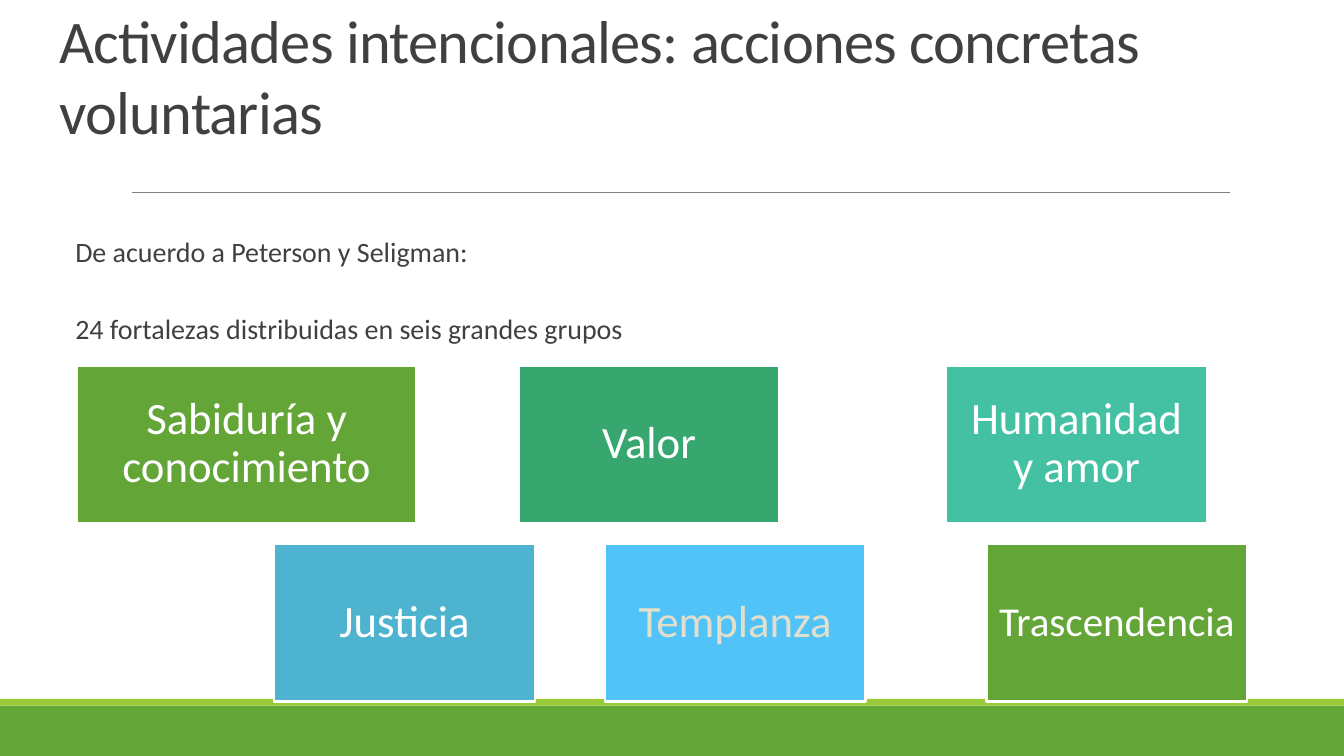
from lxml import etree
from pptx import Presentation
from pptx import util as u
from pptx.dml.color import RGBColor
from pptx.enum import shapes, text
from pptx.oxml.ns import qn

FONT = "Calibri"
COLORS = {
    "green": "63A537", "lime": "99CB38", "emerald": "37A76F",
    "teal": "44C1A3", "blue": "4EB3CF", "sky": "51C3F9",
    "rule": "808080", "ink": "404040", "white": "FFFFFF", "sand": "E2DFCC",
}
BOX_WIDTH, BOX_HEIGHT = 1.94, 1.17
ROW_TOPS = (2.72, 4.05)

# row, left, width, text, fill, text color, text size
STRENGTHS = [
    (0, 0.57, 2.53, "Sabiduría y conocimiento", "green", "white", 24),
    (0, 3.86, BOX_WIDTH, "Valor", "emerald", "white", 24),
    (0, 7.04, BOX_WIDTH, "Humanidad y amor", "teal", "white", 24),
    (1, 2.04, BOX_WIDTH, "Justicia", "blue", "white", 24),
    (1, 4.5, BOX_WIDTH, "Templanza", "sky", "sand", 24),
    (1, 7.34, BOX_WIDTH, "Trascendencia", "green", "white", 22),
]


def color(name):
    return RGBColor.from_string(COLORS[name])


def set_values(target, values):
    for name, value in values.items():
        setattr(target, name, value)


def place(shape, left, top, width, height):
    set_values(shape, {"left": u.Inches(left), "top": u.Inches(top),
                       "width": u.Inches(width), "height": u.Inches(height)})


def format_frame(frame, anchor, inset=0.1):
    values = {f"margin_{side}": u.Inches(inset)
              for side in ("left", "top", "right", "bottom")}
    values.update(word_wrap=True, vertical_anchor=anchor,
                  auto_size=text.MSO_AUTO_SIZE.NONE)
    set_values(frame, values)


def write(para, words, size, ink, **para_values):
    set_values(para, para_values)
    span = para.add_run()
    span.text = words
    set_values(span.font, {"name": FONT, "size": u.Pt(size)})
    span.font.color.rgb = color(ink)
    return span


def add_box(page, left, top, width, height, fill, outlined=False):
    box = page.shapes.add_shape(
        shapes.MSO_SHAPE.RECTANGLE, *map(u.Inches, (left, top, width, height)))
    box.shadow.inherit = False
    box.fill.solid()
    box.fill.fore_color.rgb = color(fill)
    if outlined:
        box.line.color.rgb = color("white")
        box.line.width = u.Pt(1.25)
    else:
        box.line.fill.background()
    return box


def add_rule(page, left, right, top):
    rule = page.shapes.add_connector(
        shapes.MSO_CONNECTOR.STRAIGHT, *map(u.Inches, (left, top, right, top)))
    rule.line.color.rgb = color("rule")
    rule.line.width = u.Pt(0.5)
    etree.SubElement(rule._element.spPr, qn("a:effectLst"))


def fill_title(title):
    place(title, 0.34, 0.41, 9.32, 0.8)
    format_frame(title.text_frame, text.MSO_ANCHOR.BOTTOM)
    span = write(title.text_frame.paragraphs[0],
                 "Actividades intencionales: acciones concretas voluntarias",
                 32.4, "ink", alignment=text.PP_ALIGN.LEFT, line_spacing=0.98)
    span.font._element.set("spc", "-40")


def fill_body(body):
    place(body, 0.34, 1.61, 9.32, 3.39)
    frame = body.text_frame
    format_frame(frame, text.MSO_ANCHOR.TOP)
    lines = [("De acuerdo a Peterson y Seligman:", 0),
             ("24 fortalezas distribuidas en seis grandes grupos", 20.5)]
    for index, (words, gap) in enumerate(lines):
        para = frame.add_paragraph() if index else frame.paragraphs[0]
        write(para, words, 15, "ink", line_spacing=1.15,
              space_before=u.Pt(gap), space_after=u.Pt(0))
        # Plain lines: small indent, no bullet
        properties = para._p.get_or_add_pPr()
        properties.set("marL", str(u.Inches(0.12)))
        properties.set("indent", "0")
        etree.SubElement(properties, qn("a:buNone"))


def add_strength(page, row, left, width, words, fill, ink, size):
    box = add_box(page, left, ROW_TOPS[row], width, BOX_HEIGHT, fill, True)
    format_frame(box.text_frame, text.MSO_ANCHOR.MIDDLE,
                 0.1 if size == 24 else 0.09)
    write(box.text_frame.paragraphs[0], words, size, ink,
          alignment=text.PP_ALIGN.CENTER, line_spacing=0.9)


def main():
    # Widescreen page, 16:9
    deck = Presentation()
    set_values(deck, {"slide_width": u.Inches(10),
                      "slide_height": u.Inches(10 * 9 / 16)})
    page = deck.slides.add_slide(deck.slide_layouts[1])

    # Footer bands and title rule
    add_box(page, 0, 5.25, 10, 0.38, "green")
    add_box(page, 0, 5.2, 10, 0.05, "lime")
    add_rule(page, 0.98, 9.15, 1.43)

    # Title and introduction
    fill_title(page.shapes.title)
    fill_body(page.placeholders[1])

    # Six groups of strengths
    for strength in STRENGTHS:
        add_strength(page, *strength)

    deck.save("out.pptx")


if __name__ == "__main__":
    main()
